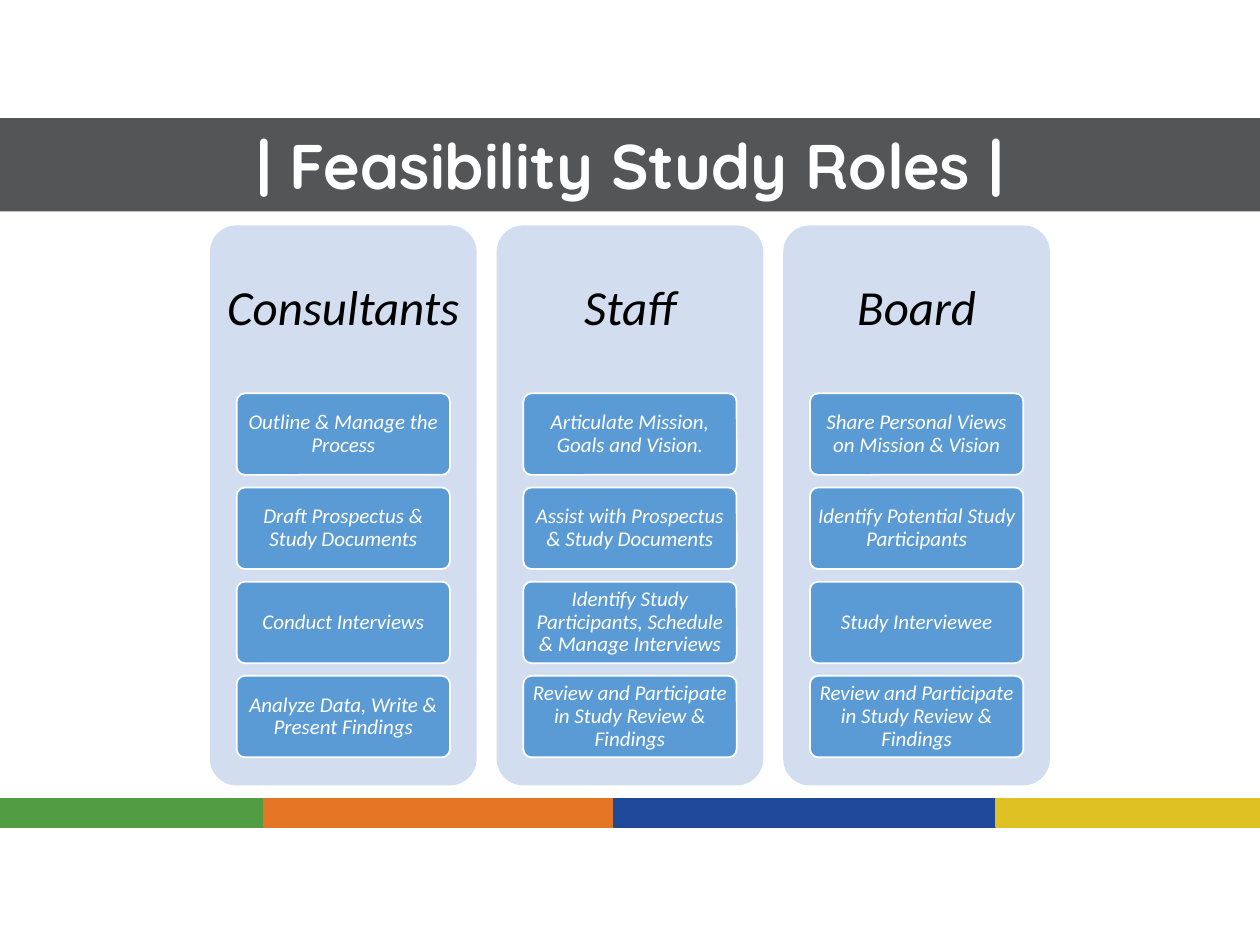
from pptx import Presentation
from pptx.dml.color import RGBColor
from pptx.enum.shapes import MSO_SHAPE
from pptx.enum.text import MSO_ANCHOR, PP_ALIGN
from pptx.util import Pt

RECTANGLE = MSO_SHAPE.RECTANGLE
ROUNDED = MSO_SHAPE.ROUNDED_RECTANGLE
MIDDLE = MSO_ANCHOR.MIDDLE
CENTER = PP_ALIGN.CENTER

COLORS = {
    "banner": "545557",
    "green": "529C43",
    "orange": "E37524",
    "blue": "204899",
    "yellow": "DEC123",
    "panel": "D2DEEF",
    "role": "5B9BD5",
    "white": "FFFFFF",
    "black": "000000",
}


def add_box(kind, left, top, width, height, fill, line=None):
    shape = slide.shapes.add_shape(kind, Pt(left), Pt(top), Pt(width), Pt(height))
    shape.shadow.inherit = False
    shape.fill.solid()
    shape.fill.fore_color.rgb = RGBColor.from_string(COLORS[fill])
    if line:
        shape.line.color.rgb = RGBColor.from_string(COLORS[line])
        shape.line.width = Pt(1)
    else:
        shape.line.fill.background()
    if kind == ROUNDED:
        shape.adjustments[0] = 0.1
    return shape


def write_text(shape, text, font, size, color, inset, bold=False, italic=False):
    frame = shape.text_frame
    frame.word_wrap = True
    frame.vertical_anchor = MIDDLE
    frame.margin_left = frame.margin_right = Pt(inset)
    frame.margin_top = frame.margin_bottom = Pt(inset)
    paragraph = frame.paragraphs[0]
    paragraph.alignment = CENTER
    if italic:
        paragraph.line_spacing = 0.9
    run = paragraph.add_run()
    run.text = text
    run.font.name = font
    run.font.size = Pt(size)
    run.font.bold = bold
    run.font.italic = italic
    run.font.color.rgb = RGBColor.from_string(COLORS[color])


presentation = Presentation()
presentation.slide_width = Pt(720)
presentation.slide_height = Pt(540)
slide = presentation.slides.add_slide(presentation.slide_layouts[6])

banner = add_box(RECTANGLE, 0, 67.5, 720, 53.3, "banner")
write_text(banner, "| Feasibility Study Roles |", "Quicksand", 36, "white", 3.6, bold=True)

stripe_edges = [0, 151, 351, 569, 720]
stripe_colors = ["green", "orange", "blue", "yellow"]
for left, right, color in zip(stripe_edges, stripe_edges[1:], stripe_colors):
    add_box(RECTANGLE, left, 456.5, right - left, 16, color, color)

columns = {
    "Consultants": [
        "Outline & Manage the Process",
        "Draft Prospectus & Study Documents",
        "Conduct Interviews",
        "Analyze Data, Write & Present Findings",
    ],
    "Staff": [
        "Articulate Mission, Goals and Vision.",
        "Assist with Prospectus & Study Documents",
        "Identify Study Participants, Schedule & Manage Interviews",
        "Review and Participate in Study Review & Findings",
    ],
    "Board": [
        "Share Personal Views on Mission & Vision",
        "Identify Potential Study Participants",
        "Study Interviewee",
        "Review and Participate in Study Review & Findings",
    ],
}
panel_top, panel_width, panel_height, panel_pitch = 128.8, 152.4, 320, 163.8
role_width, role_height, role_pitch = 0.8 * panel_width, 46.6, 53.8
header_height = 0.3 * panel_height

for column, (group, roles) in enumerate(columns.items()):
    left = 120 + column * panel_pitch
    add_box(ROUNDED, left, panel_top, panel_width, panel_height, "panel")
    header = slide.shapes.add_textbox(Pt(left), Pt(panel_top), Pt(panel_width), Pt(header_height))
    write_text(header, group, "Calibri", 28, "black", 8.4, italic=True)
    role_left = left + (panel_width - role_width) / 2
    for row, role in enumerate(roles):
        role_top = panel_top + header_height + row * role_pitch
        box = add_box(ROUNDED, role_left, role_top, role_width, role_height, "role", "white")
        write_text(box, role, "Calibri", 12, "white", 2.4, italic=True)

presentation.save("out.pptx")
